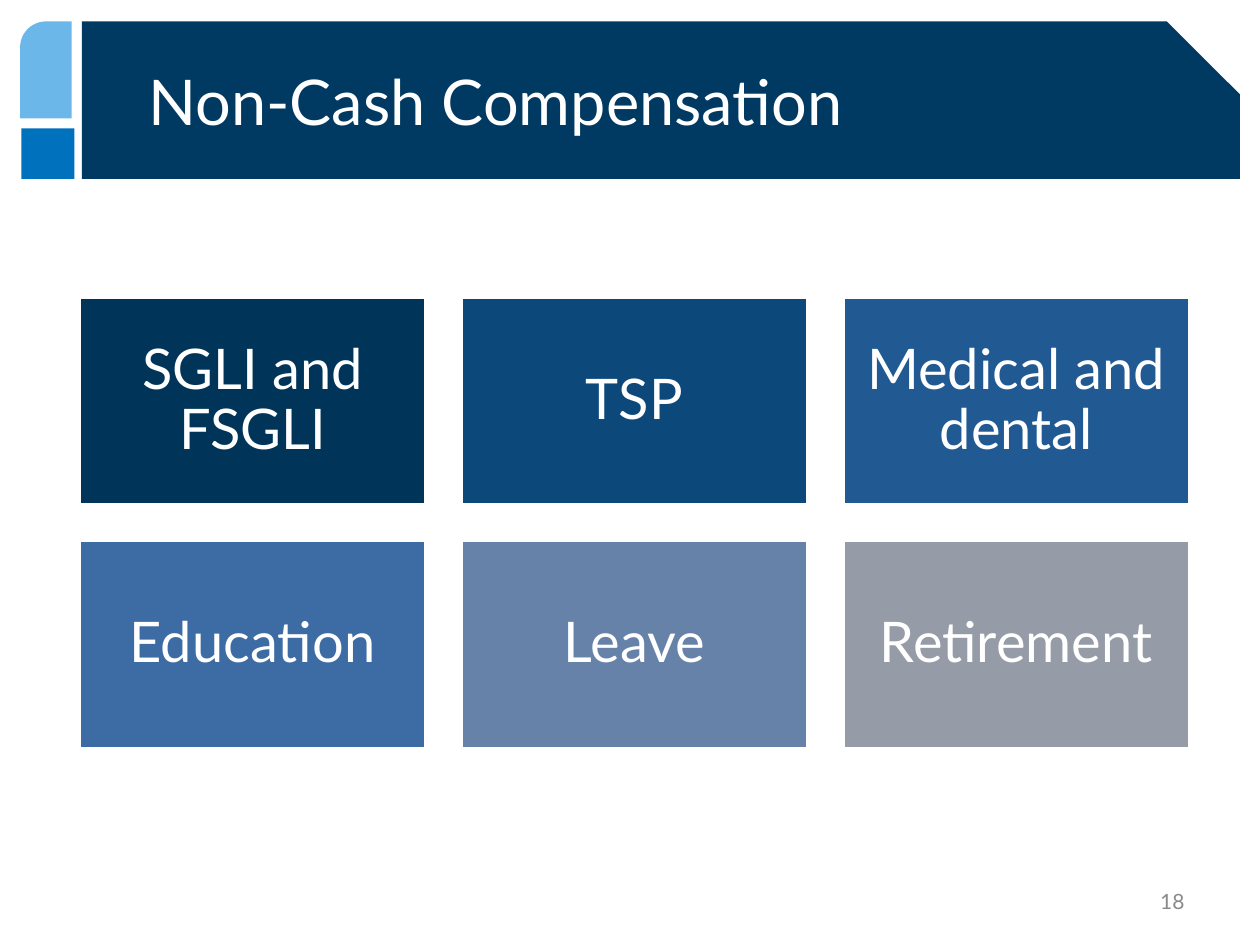
from dataclasses import dataclass

import pptx
import pptx.dml.color
import pptx.enum.shapes
import pptx.enum.text
import pptx.util

Inches = pptx.util.Inches
Shape = pptx.enum.shapes.MSO_SHAPE
Align = pptx.enum.text.PP_ALIGN

FONT = "Lato"
COLORS = {
    "white": "FFFFFF",
    "banner": "003A62",
    "square": "0071BC",
    "tab": "6CB7EA",
    "number": "898989",
    "insurance": "003559",
    "savings": "0C487A",
    "health": "215A93",
    "education": "3D6CA4",
    "leave": "6782A8",
    "retirement": "959CA7",
}


@dataclass
class Box:
    left: float
    top: float
    width: float
    height: float

    def lengths(self) -> tuple:
        return tuple(Inches(n) for n in (self.left, self.top, self.width, self.height))


@dataclass
class Benefit:
    text: str
    color: str


BENEFITS = [
    Benefit("SGLI and FSGLI", "insurance"),
    Benefit("TSP", "savings"),
    Benefit("Medical and dental", "health"),
    Benefit("Education", "education"),
    Benefit("Leave", "leave"),
    Benefit("Retirement", "retirement"),
]
COLUMNS = 3
FIRST_TILE = Box(0.63, 2.36, 2.75, 1.65)
GAP = 0.28


def rgb(name: str) -> pptx.dml.color.RGBColor:
    return pptx.dml.color.RGBColor.from_string(COLORS[name])


def write(frame, text: str, *, size: float, color: str = "white",
          align=Align.LEFT, spacing: float = 1.0, inset: float | None = None) -> None:
    frame.word_wrap = True
    frame.auto_size = pptx.enum.text.MSO_AUTO_SIZE.NONE
    frame.vertical_anchor = pptx.enum.text.MSO_ANCHOR.MIDDLE
    if inset is not None:
        frame.margin_left = frame.margin_right = Inches(inset)
        frame.margin_top = frame.margin_bottom = Inches(inset)
    para = frame.paragraphs[0]
    para.alignment = align
    para.line_spacing = spacing
    span = para.add_run()
    span.text = text
    span.font.name = FONT
    span.font.size = pptx.util.Pt(size)
    span.font.color.rgb = rgb(color)


def add_block(page, kind, box: Box, color: str, corner: float | None = None):
    block = page.shapes.add_shape(kind, *box.lengths())
    block.shadow.inherit = False
    block.fill.solid()
    block.fill.fore_color.rgb = rgb(color)
    block.line.fill.background()
    if corner is not None:
        block.adjustments[0] = corner
    return block


def add_header(page) -> None:
    add_block(page, Shape.SNIP_1_RECTANGLE, Box(0.65, 0.17, 9.19, 1.25), "banner", 0.463)
    add_block(page, Shape.RECTANGLE, Box(0.17, 1.02, 0.42, 0.4), "square")
    tab = add_block(page, Shape.ROUND_1_RECTANGLE, Box(0.16, 0.17, 0.41, 0.77), "tab", 0.5)
    tab.element.spPr.xfrm.set("flipH", "1")

    # The title is moved in front of the banner
    title = page.shapes.title
    title.element.getparent().append(title.element)
    title.left, title.top, title.width, title.height = Box(1.08, 0.17, 8.17, 1.25).lengths()
    write(title.text_frame, "Non-Cash Compensation", size=36)


def add_tile(page, index: int, benefit: Benefit) -> None:
    row, column = divmod(index, COLUMNS)
    box = Box(FIRST_TILE.left + column * (FIRST_TILE.width + GAP),
              FIRST_TILE.top + row * (FIRST_TILE.height + GAP),
              FIRST_TILE.width, FIRST_TILE.height)
    tile = add_block(page, Shape.RECTANGLE, box, benefit.color)
    tile.line.color.rgb = rgb("white")
    tile.line.width = pptx.util.Pt(2)
    write(tile.text_frame, benefit.text, size=32, align=Align.CENTER, spacing=0.9, inset=0.13)


def main() -> None:
    deck = pptx.Presentation()
    deck.slide_width, deck.slide_height = Inches(10), Inches(7.5)
    page = deck.slides.add_slide(deck.slide_layouts.get_by_name("Title Only"))

    # Header band
    add_header(page)

    # Grid of benefits
    for index, benefit in enumerate(BENEFITS):
        add_tile(page, index, benefit)

    # Page number
    number = page.shapes.add_textbox(*Box(7.17, 6.95, 2.33, 0.4).lengths())
    write(number.text_frame, "18", size=12, color="number", align=Align.RIGHT)

    deck.save("out.pptx")


if __name__ == "__main__":
    main()
